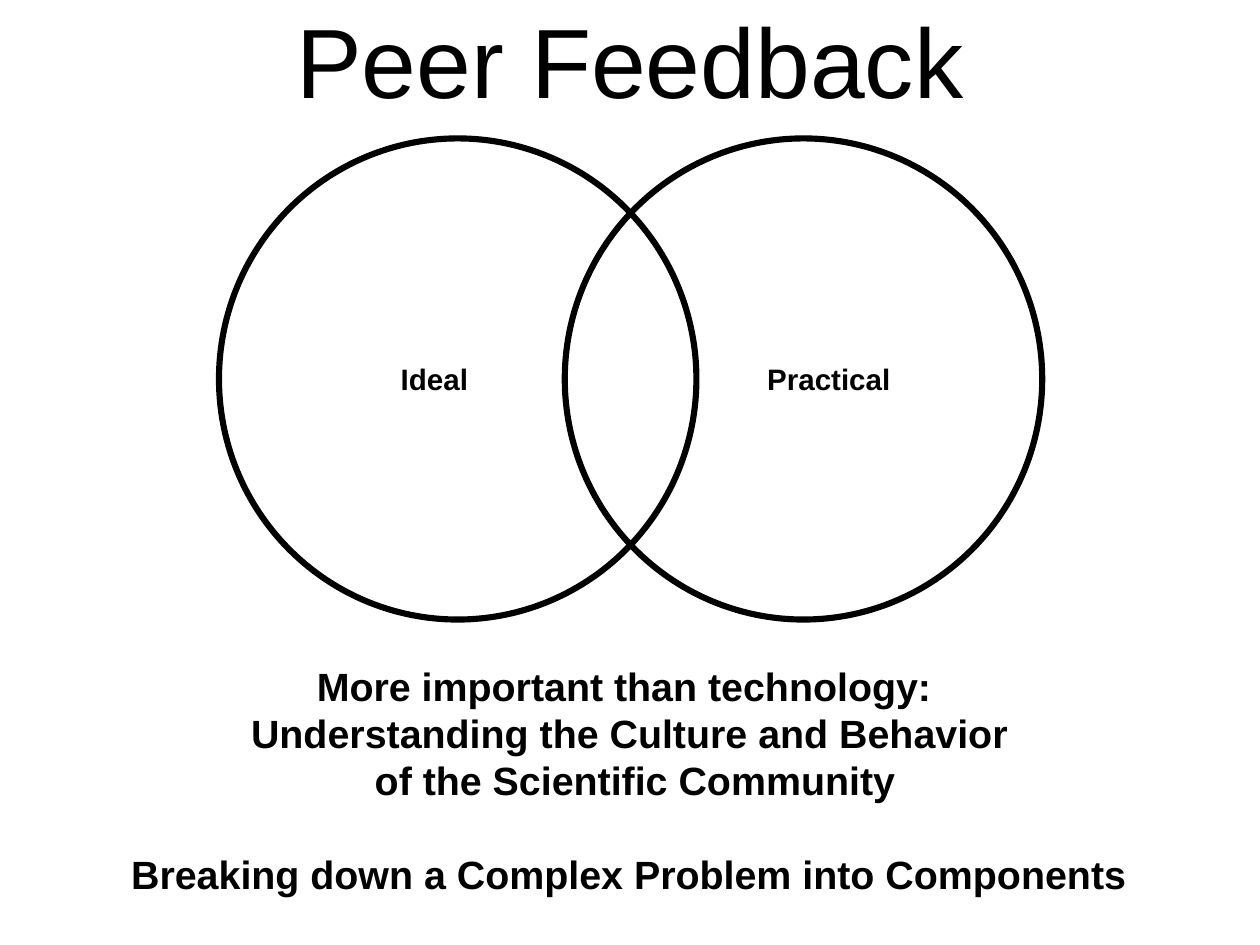
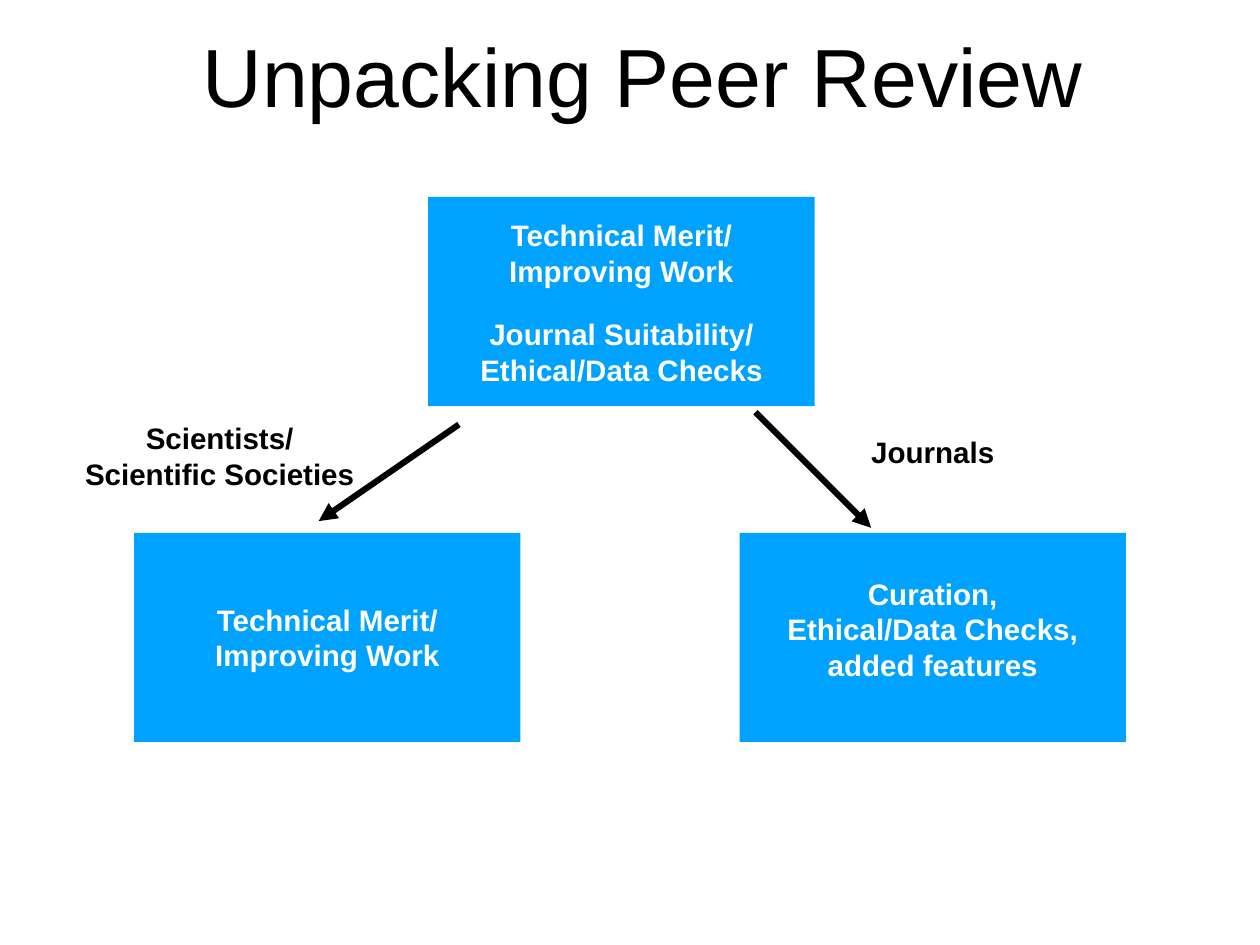
from dataclasses import dataclass

from lxml import etree
from pptx import Presentation
from pptx.dml.color import RGBColor
from pptx.enum import shapes as kinds, text as tx
from pptx.oxml.ns import qn
from pptx.util import Pt


@dataclass(frozen=True)
class Theme:
    font: str = "Arial"
    ink: RGBColor = RGBColor(0, 0, 0)
    paper: RGBColor = RGBColor(255, 255, 255)
    accent: RGBColor = RGBColor(0, 0xA2, 0xFF)
    label: int = 24
    statement: int = 32
    stroke: int = 5
    inset: int = 4


THEME = Theme()
TITLE_SIZE = (874, 170)
CIRCLE_SIZE = (388, 391)
BOX_SIZE = (314, 170)


def centred(centre, size):
    """Left, top, width and height of a frame around a centre point."""
    (x, y), (width, height) = centre, size
    return [Pt(n) for n in (x - width / 2, y - height / 2, width, height)]


def write_lines(frame, lines, size, color, bold):
    frame.vertical_anchor = tx.MSO_ANCHOR.MIDDLE
    frame.margin_left = frame.margin_right = Pt(THEME.inset)
    frame.margin_top = frame.margin_bottom = Pt(THEME.inset)
    for index, line in enumerate(lines):
        paragraph = frame.add_paragraph() if index else frame.paragraphs[0]
        paragraph.alignment = tx.PP_ALIGN.CENTER
        run = paragraph.add_run()
        run.text = line
        font = run.font
        font.name, font.size, font.bold = THEME.font, Pt(size), bold
        font.color.rgb = color


def add_titled_slide(deck, title, size, centre):
    slide = deck.slides.add_slide(deck.slide_layouts.get_by_name("Title Only"))
    heading = slide.shapes.title
    heading.left, heading.top, heading.width, heading.height = centred(centre, TITLE_SIZE)
    heading.text_frame.auto_size = tx.MSO_AUTO_SIZE.NONE
    write_lines(heading.text_frame, [title], size, THEME.ink, False)
    return slide.shapes


def add_label(shapes, lines, centre, width, color=THEME.ink, size=THEME.label):
    """Bold unwrapped text whose height follows from its lines."""
    height = len(lines) * size * 1.2 + 2 * THEME.inset
    frame = shapes.add_textbox(*centred(centre, (width, height))).text_frame
    frame.word_wrap = False
    frame.auto_size = tx.MSO_AUTO_SIZE.SHAPE_TO_FIT_TEXT
    write_lines(frame, lines, size, color, True)


def add_circle(shapes, centre):
    circle = shapes.add_shape(kinds.MSO_SHAPE.OVAL, *centred(centre, CIRCLE_SIZE))
    circle.shadow.inherit = False
    circle.fill.background()
    circle.line.color.rgb = THEME.ink
    circle.line.width = Pt(THEME.stroke)


def add_box(shapes, centre):
    box = shapes.add_shape(kinds.MSO_SHAPE.RECTANGLE, *centred(centre, BOX_SIZE))
    box.shadow.inherit = False
    box.fill.solid()
    box.fill.fore_color.rgb = THEME.accent
    box.line.fill.background()


def add_arrow(shapes, start, end):
    points = [Pt(n) for n in (*start, *end)]
    arrow = shapes.add_connector(kinds.MSO_CONNECTOR.STRAIGHT, *points)
    arrow.line.color.rgb = THEME.ink
    arrow.line.width = Pt(THEME.stroke)
    etree.SubElement(arrow.line._get_or_add_ln(), qn("a:tailEnd"), type="triangle")
    etree.SubElement(arrow._element.spPr, qn("a:effectLst"))


def add_branch(shapes, centre, outcome, outcome_centre, outcome_width,
               arrow, owner, owner_centre, owner_width):
    """A grouped box with its outcome, the arrow into it and who owns it."""
    branch = shapes.add_group_shape().shapes
    add_box(branch, centre)
    add_label(branch, outcome, outcome_centre, outcome_width, THEME.paper)
    add_arrow(branch, *arrow)
    add_label(branch, owner, owner_centre, owner_width)


def build_feedback(deck):
    shapes = add_titled_slide(deck, "Peer Feedback", 80, (512, 48))
    middle = 308
    venn = shapes.add_group_shape().shapes
    for x in (372, 653):
        add_circle(venn, (x, middle))
    add_label(venn, ["Ideal"], (353, middle), 65)
    add_label(venn, ["Practical"], (673.5, middle), 110)

    message = ["More important than technology: ",
               "Understanding the Culture and Behavior",
               " of the Scientific Community"]
    add_label(shapes, message, (512, 595.5), 631, size=THEME.statement)
    add_label(shapes, ["Breaking down a Complex Problem into Components"],
              (511.5, 710.5), 819, size=THEME.statement)


def build_review(deck):
    shapes = add_titled_slide(deck, "Unpacking Peer Review", 67, (522, 60.5))
    merit = ["Technical Merit/", "Improving Work"]
    merit_width = 199
    review_x, scientists_x, journals_x = 505, 266, 758
    branch_y = 518

    add_box(shapes, (review_x, 245))
    add_label(shapes, ["Journal Suitability/", "Ethical/Data Checks"],
              (review_x, 286), 243, THEME.paper)
    add_label(shapes, merit, (review_x, 205.5), merit_width, THEME.paper)

    add_branch(shapes, (scientists_x, branch_y),
               merit, (scientists_x, branch_y), merit_width,
               ((373, 345), (259, 423.5)),
               ["Scientists/", "Scientific Societies"], (178.5, 370.5), 227.5)
    add_branch(shapes, (journals_x, branch_y),
               ["Curation,", "Ethical/Data Checks,", "added features"],
               (journals_x, 511), 256,
               ((614, 335), (708, 429)),
               ["Journals"], (journals_x, 367), 108)


def main():
    deck = Presentation()
    deck.slide_width, deck.slide_height = Pt(1024), Pt(768)
    build_feedback(deck)
    build_review(deck)
    deck.save("out.pptx")


if __name__ == "__main__":
    main()
